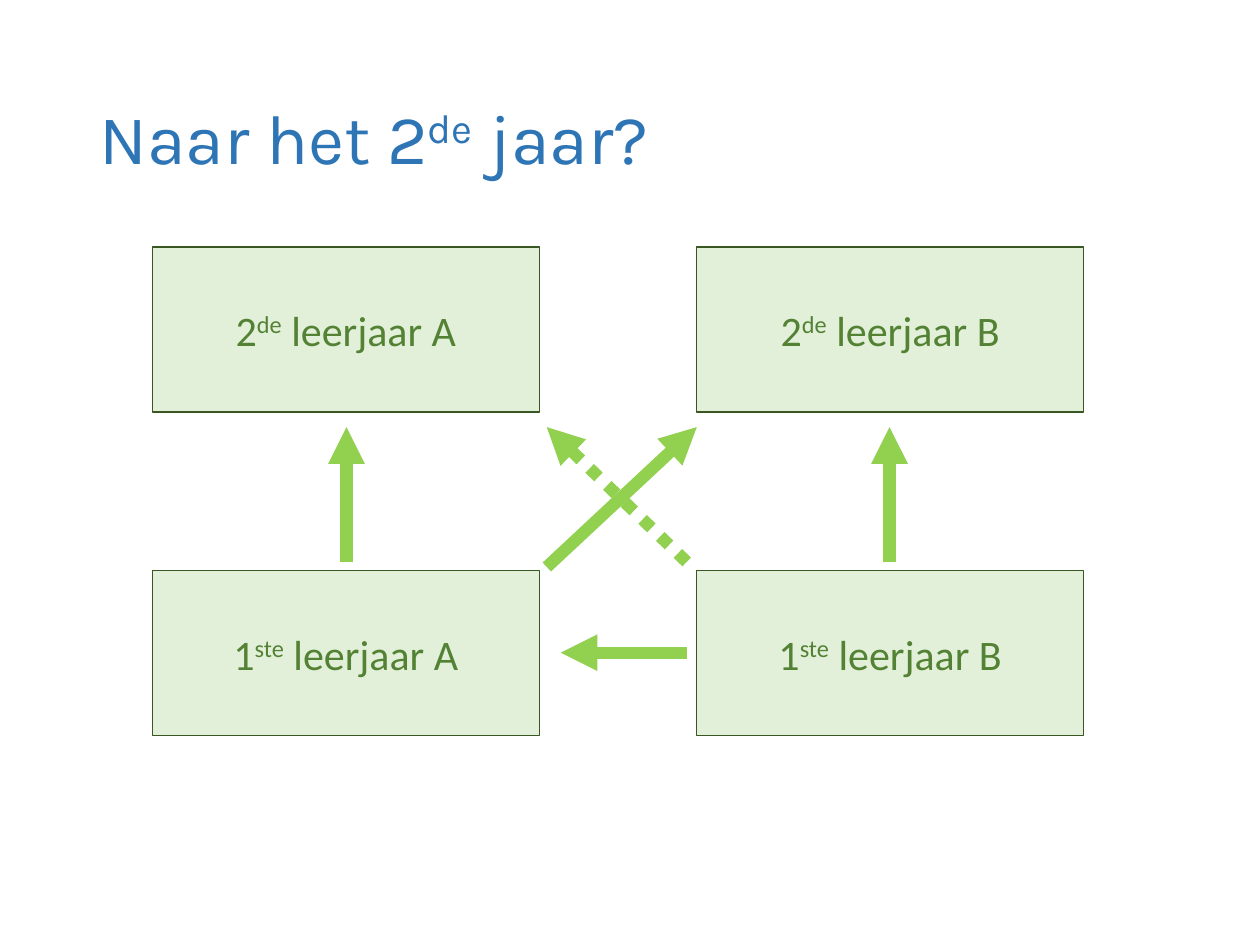
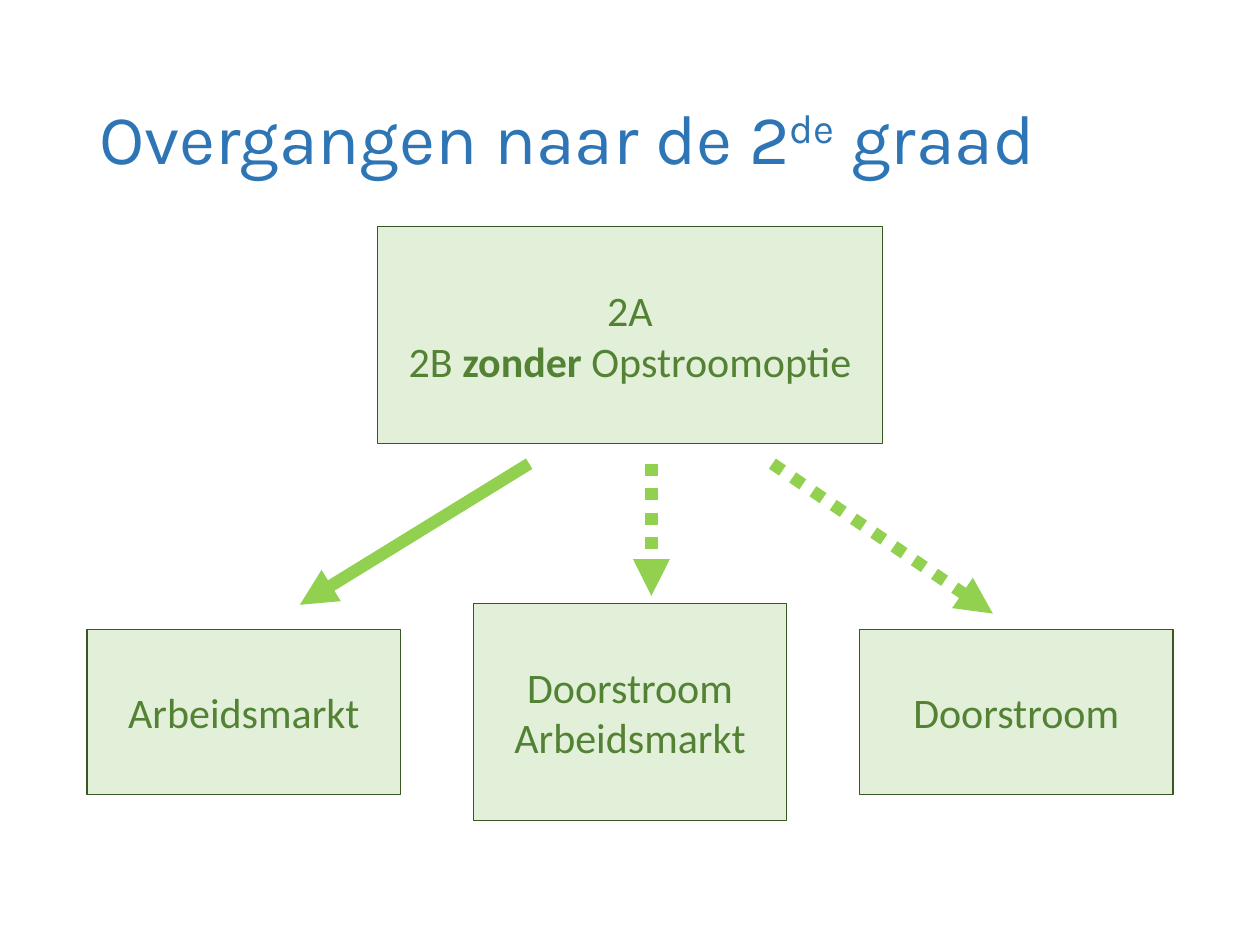
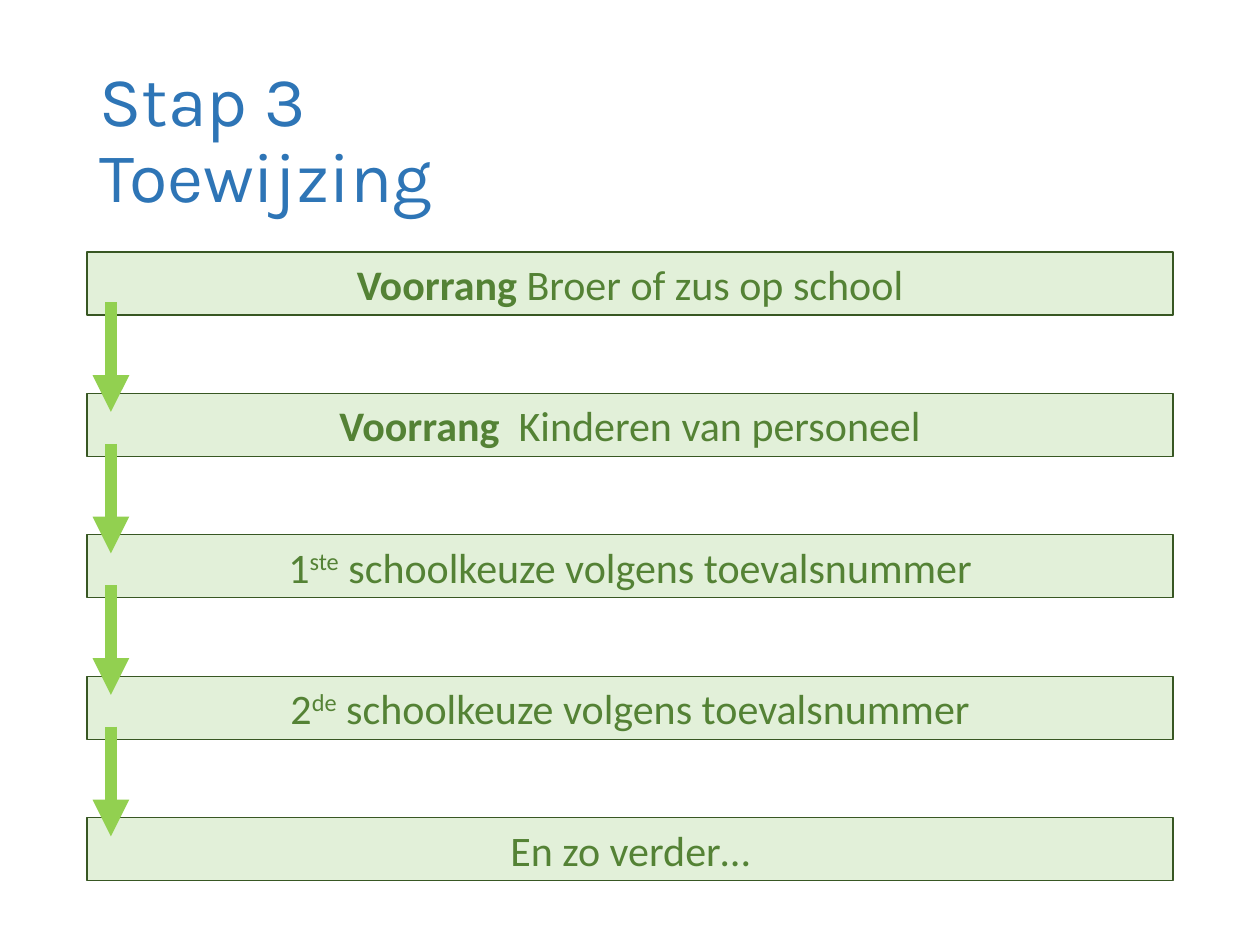
from lxml.etree import SubElement
from pptx import Presentation
from pptx.dml.color import RGBColor
from pptx.enum.dml import MSO_LINE
from pptx.enum.shapes import MSO_CONNECTOR, MSO_SHAPE
from pptx.enum.text import MSO_ANCHOR, PP_ALIGN
from pptx.oxml.ns import qn
from pptx.util import Inches, Pt

BLUE = RGBColor(0x2E, 0x75, 0xB6)
PALE_GREEN = RGBColor(0xE2, 0xF0, 0xD9)
DARK_GREEN = RGBColor(0x38, 0x57, 0x23)
TEXT_GREEN = RGBColor(0x54, 0x82, 0x35)
ARROW_GREEN = RGBColor(0x92, 0xD0, 0x50)

MARGIN, CONTENT_WIDTH = 0.69, 8.62
BREAK = ("\n", "")

YEAR_TITLE = [("Naar het 2", ""), ("de", "super"), (" jaar?", "")]
YEARS = [("2", "de"), ("1", "ste")]
STREAMS = ["A", "B"]
STREAM_LEFT, STREAM_PITCH = 1.21, 4.32
YEAR_TOP, YEAR_PITCH = 1.96, 2.57
YEAR_WIDTH, BOX_HEIGHT = 3.07, 1.31
YEAR_ARROWS = [
    ((2.75, 4.46), (2.75, 3.39), False),
    ((7.06, 4.46), (7.06, 3.39), False),
    ((4.34, 4.5), (5.53, 3.39), False),
    ((5.45, 5.18), (4.45, 5.18), False),
    ((5.45, 4.46), (4.34, 3.39), True),
]

GRADE_TITLE = [("Overgangen naar de 2", ""), ("de", "super"), (" graad", "")]
START = [("2A", ""), BREAK, ("2B ", ""), ("zonder ", "bold"), ("Opstroomoptie", "")]
START_TOP, START_WIDTH, TALL_HEIGHT = 1.8, 4.01, 1.72
GOALS = [
    ([("Arbeidsmarkt", "")], BOX_HEIGHT),
    ([("Doorstroom", ""), BREAK, ("Arbeidsmarkt", "")], TALL_HEIGHT),
    ([("Doorstroom", "")], BOX_HEIGHT),
]
GOAL_WIDTH, GOAL_MIDDLE = 2.49, 5.65
GRADE_ARROWS = [
    ((4.2, 3.68), (2.38, 4.8), False),
    ((6.13, 3.68), (7.88, 4.87), True),
    ((5.17, 3.68), (5.17, 4.73), True),
]

STEP_TITLE = [("Stap 3", ""), BREAK, ("Toewijzing", "")]
STEPS = [
    [("Voorrang ", "bold"), ("Broer of zus op school", "")],
    [("Voorrang ", "bold"), (" Kinderen van personeel", "")],
    [("1", ""), ("ste", "super"), (" schoolkeuze volgens toevalsnummer", "")],
    [("2", ""), ("de", "super"), (" schoolkeuze volgens toevalsnummer", "")],
    [("En zo verder…", "")],
]
STEP_TOP, STEP_BOTTOM, STEP_HEIGHT = 2, 6.99, 0.5
STEP_ARROW_LEFT, STEP_ARROW_DROP, STEP_ARROW_LENGTH = 0.88, 0.4, 0.87


def write(paragraph, parts, font_name, size, color):
    """Fill a paragraph with plain, bold and superscript parts."""
    for text, style in parts:
        if text == "\n":
            paragraph.add_line_break()
            continue
        run = paragraph.add_run()
        run.text = text
        if style == "bold":
            run.font.bold = True
        elif style == "super":
            run.font._element.set("baseline", "30000")
    paragraph.font.name = font_name
    paragraph.font.size = Pt(size)
    paragraph.font.color.rgb = color


def add_titled_slide(prs, parts):
    """Add a slide with the shared title style."""
    slide = prs.slides.add_slide(prs.slide_layouts[5])
    title = slide.shapes.title
    title.left, title.top = Inches(MARGIN), Inches(0.4)
    title.width, title.height = Inches(CONTENT_WIDTH), Inches(1.45)
    title.text_frame.vertical_anchor = MSO_ANCHOR.MIDDLE
    heading = title.text_frame.paragraphs[0]
    heading.alignment = PP_ALIGN.LEFT
    heading.line_spacing = 0.9
    write(heading, parts, "Karla", 40, BLUE)
    return slide


def add_box(slide, parts, left, top, width, height):
    """Add a pale green box with centred text."""
    box = slide.shapes.add_shape(
        MSO_SHAPE.RECTANGLE, Inches(left), Inches(top), Inches(width), Inches(height))
    box.shadow.inherit = False
    box.fill.solid()
    box.fill.fore_color.rgb = PALE_GREEN
    box.line.color.rgb = DARK_GREEN
    box.line.width = Pt(0.75)
    box.text_frame.word_wrap = True
    box.text_frame.vertical_anchor = MSO_ANCHOR.MIDDLE
    label = box.text_frame.paragraphs[0]
    label.alignment = PP_ALIGN.CENTER
    write(label, parts, "Calibri", 24, TEXT_GREEN)


def add_arrow(slide, start, end, dotted=False):
    """Add a thick green arrow between two points."""
    arrow = slide.shapes.add_connector(
        MSO_CONNECTOR.STRAIGHT, *(Inches(value) for value in start + end))
    arrow.line.color.rgb = ARROW_GREEN
    arrow.line.width = Pt(7)
    if dotted:
        arrow.line.dash_style = MSO_LINE.ROUND_DOT
    SubElement(arrow.line._get_or_add_ln(), qn("a:tailEnd"), type="triangle")
    SubElement(arrow._element.spPr, qn("a:effectLst"))


def build_years(prs):
    """Show the moves from the first to the second year."""
    slide = add_titled_slide(prs, YEAR_TITLE)
    for row, (number, ending) in enumerate(YEARS):
        for column, stream in enumerate(STREAMS):
            parts = [(number, ""), (ending, "super"), (f" leerjaar {stream}", "")]
            add_box(slide, parts, STREAM_LEFT + column * STREAM_PITCH,
                    YEAR_TOP + row * YEAR_PITCH, YEAR_WIDTH, BOX_HEIGHT)
    for start, end, dotted in YEAR_ARROWS:
        add_arrow(slide, start, end, dotted)


def build_grades(prs):
    """Show the moves to the second grade."""
    slide = add_titled_slide(prs, GRADE_TITLE)
    start_left = MARGIN + (CONTENT_WIDTH - START_WIDTH) / 2
    add_box(slide, START, start_left, START_TOP, START_WIDTH, TALL_HEIGHT)
    pitch = (CONTENT_WIDTH - GOAL_WIDTH) / (len(GOALS) - 1)
    for column, (parts, height) in enumerate(GOALS):
        add_box(slide, parts, MARGIN + column * pitch,
                GOAL_MIDDLE - height / 2, GOAL_WIDTH, height)
    for start, end, dotted in GRADE_ARROWS:
        add_arrow(slide, start, end, dotted)


def build_steps(prs):
    """Show the order in which places are given."""
    slide = add_titled_slide(prs, STEP_TITLE)
    pitch = (STEP_BOTTOM - STEP_HEIGHT - STEP_TOP) / (len(STEPS) - 1)
    tops = [STEP_TOP + index * pitch for index in range(len(STEPS))]
    for parts, top in zip(STEPS, tops):
        add_box(slide, parts, MARGIN, top, CONTENT_WIDTH, STEP_HEIGHT)
    for top in tops[:-1]:
        arrow_top = top + STEP_ARROW_DROP
        add_arrow(slide, (STEP_ARROW_LEFT, arrow_top),
                  (STEP_ARROW_LEFT, arrow_top + STEP_ARROW_LENGTH))


def main():
    """Build and save the three slides."""
    prs = Presentation()
    prs.slide_width, prs.slide_height = Inches(10), Inches(7.5)
    build_years(prs)
    build_grades(prs)
    build_steps(prs)
    prs.save("out.pptx")


if __name__ == "__main__":
    main()
